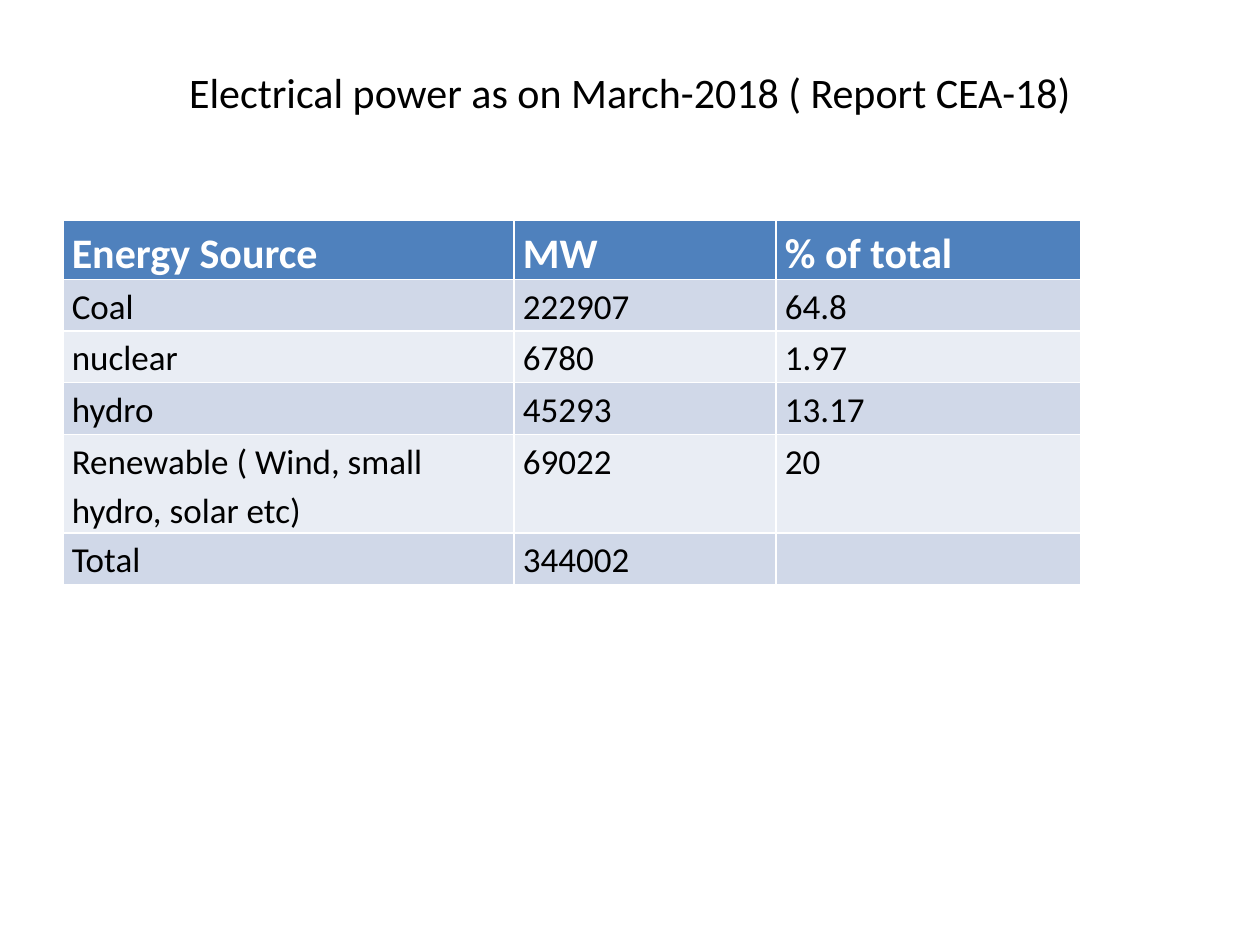
import pptx
import pptx.dml.color
import pptx.enum.text
import pptx.util

COLORS = {"header": "4F81BD", "odd": "D0D8E8", "even": "E9EDF4",
          "light": "FFFFFF", "dark": "000000"}
FONT = "Calibri"
COLUMN_WIDTHS = (3.58, 2.08, 2.42)
ROW_HEIGHT = 0.41
CELL_MARGINS = {"margin_left": 0.07, "margin_right": 0.07,
                "margin_top": 0, "margin_bottom": 0}
ENERGY_ROWS = (
    ("Energy Source", "MW", "% of total"),
    ("Coal", "222907", "64.8"),
    ("nuclear", "6780", "1.97"),
    ("hydro", "45293", "13.17"),
    ("Renewable ( Wind, small hydro, solar etc)", "69022", "20"),
    ("Total", "344002", ""),
)


def rgb(name):
    return pptx.dml.color.RGBColor.from_string(COLORS[name])


def add_run(p, text, size, color, bold=False):
    r = p.add_run()
    r.text = text
    formats = {"name": FONT, "size": pptx.util.Pt(size), "bold": bold}
    for attribute, value in formats.items():
        setattr(r.font, attribute, value)
    r.font.color.rgb = rgb(color)


def set_title(prs, s, text):
    title = s.shapes.title
    places = {"left": 0.05 * prs.slide_width, "top": 0.04 * prs.slide_height,
              "width": 0.9 * prs.slide_width, "height": prs.slide_height / 6}
    for attribute, value in places.items():
        setattr(title, attribute, int(value))
    tf = title.text_frame
    tf.vertical_anchor = pptx.enum.text.MSO_ANCHOR.MIDDLE
    tf.margin_bottom = pptx.util.Inches(0.45)
    p = tf.paragraphs[0]
    p.alignment = pptx.enum.text.PP_ALIGN.CENTER
    add_run(p, text, 24, "dark")


def fill_cell(cell, text, row):
    header = row == 0
    for attribute, value in CELL_MARGINS.items():
        setattr(cell, attribute, pptx.util.Inches(value))
    cell.fill.solid()
    cell.fill.fore_color.rgb = rgb("header" if header else "odd" if row % 2 else "even")
    if text:
        p = cell.text_frame.paragraphs[0]
        p.line_spacing = 1.15
        add_run(p, text, 24 if header else 20, "light" if header else "dark", header)


def add_energy_table(prs, s):
    table = s.shapes.add_table(
        len(ENERGY_ROWS), len(COLUMN_WIDTHS),
        int(0.05 * prs.slide_width), pptx.util.Inches(1.75),
        pptx.util.Inches(sum(COLUMN_WIDTHS)),
        pptx.util.Inches(ROW_HEIGHT * len(ENERGY_ROWS))).table
    for column, width in zip(table.columns, COLUMN_WIDTHS):
        column.width = pptx.util.Inches(width)
    for row, texts in enumerate(ENERGY_ROWS):
        table.rows[row].height = pptx.util.Inches(ROW_HEIGHT)
        for column, text in enumerate(texts):
            fill_cell(table.cell(row, column), text, row)


def main():
    prs = pptx.Presentation()
    prs.slide_width = pptx.util.Inches(10)
    prs.slide_height = pptx.util.Inches(7.5)
    s = prs.slides.add_slide(prs.slide_layouts.get_by_name("Title Only"))
    set_title(prs, s, "Electrical power as on March-2018 ( Report CEA-18)")
    add_energy_table(prs, s)
    prs.save("out.pptx")


if __name__ == "__main__":
    main()
